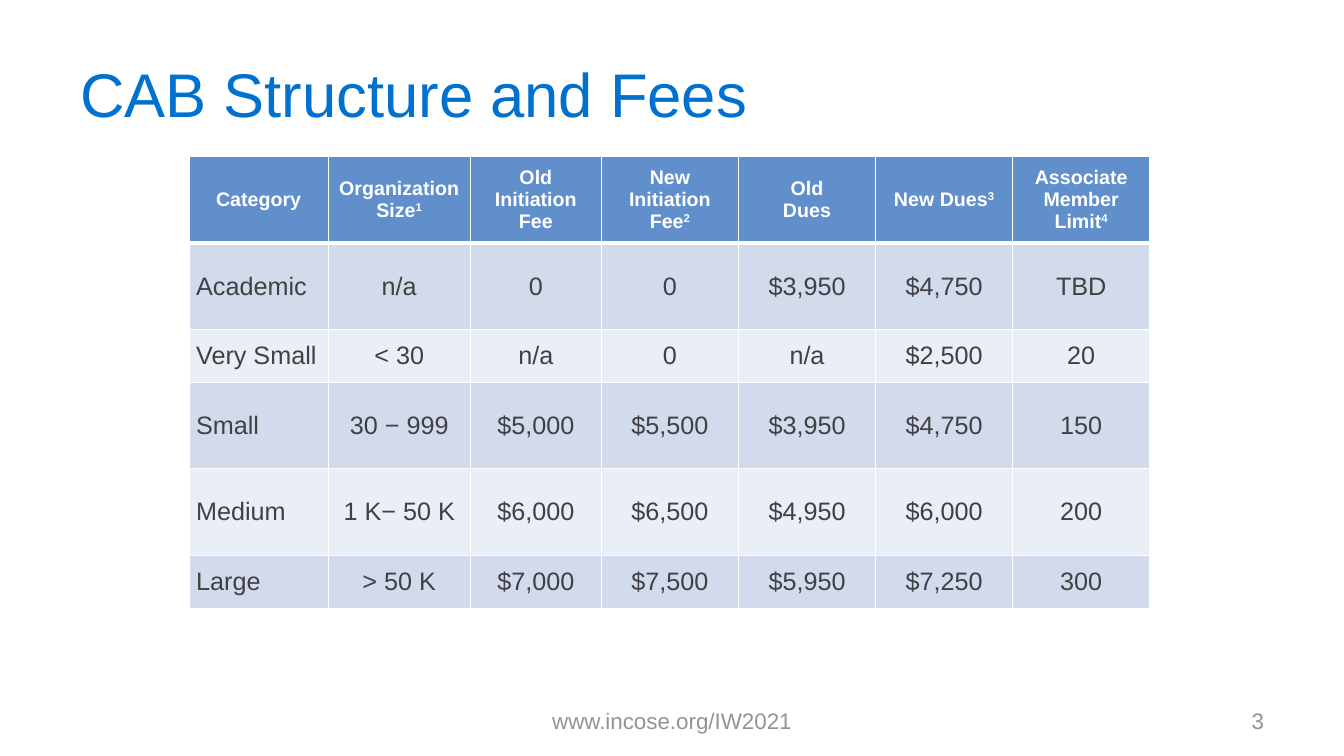
from pptx import Presentation, util as u
from pptx.dml.color import RGBColor
from pptx.enum import text
from pptx.oxml import parse_xml
from pptx.oxml.ns import nsdecls

PX = 9080  # EMU in one px
BLUE = RGBColor(0x00, 0x71, 0xCE)
GRAY = RGBColor(0x93, 0x93, 0x93)
INK = RGBColor(0x41, 0x40, 0x42)
WHITE = RGBColor(0xFF, 0xFF, 0xFF)
HEAD = RGBColor(0x61, 0x8F, 0xCB)
BANDS = RGBColor(0xD2, 0xDB, 0xEC), RGBColor(0xEA, 0xEE, 0xF6)
LEFT, MID, RIGHT = text.PP_ALIGN.LEFT, text.PP_ALIGN.CENTER, text.PP_ALIGN.RIGHT

COLS = [139, 142, 131, 137, 137, 137, 137]
ROWS = [87, 86, 53, 86, 87, 53]
FEES = [
    ["Category", "Organization\nSize^1", "Old\nInitiation Fee", "New\nInitiation Fee^2",
     "Old\nDues", "New Dues^3", "Associate Member\nLimit^4"],
    ["Academic", "n/a", "0", "0", "$3,950", "$4,750", "TBD"],
    ["Very Small", "< 30", "n/a", "0", "n/a", "$2,500", "20"],
    ["Small", "30 − 999", "$5,000", "$5,500", "$3,950", "$4,750", "150"],
    ["Medium", "1 K− 50 K", "$6,000", "$6,500", "$4,950", "$6,000", "200"],
    ["Large", "> 50 K", "$7,000", "$7,500", "$5,950", "$7,250", "300"],
]


class Deck:
    font = "Arial"

    def __init__(self, wide, high):
        self.prs = Presentation()
        self.prs.slide_width, self.prs.slide_height = wide * PX, high * PX
        self.slide = self.prs.slides.add_slide(self.prs.slide_layouts[6])

    def fill(self, frame, words, size, color, align, bold=False):
        """Set the text of a frame; a mark after ^ becomes a superscript."""
        frame.text = words.replace("^", "")
        for para, line in zip(frame.paragraphs, words.split("\n")):
            para.alignment = align
            base, _, mark = line.partition("^")
            para.runs[0].text = base
            if mark:
                note = para.add_run()
                note.text = mark
                note.font._element.set("baseline", "30000")
            for run in para.runs:
                run.font.name, run.font.size = self.font, u.Pt(size)
                run.font.bold, run.font.color.rgb = bold, color

    def label(self, box, words, size, color, align):
        frame = self.slide.shapes.add_textbox(*(n * PX for n in box)).text_frame
        frame.word_wrap = True
        frame.vertical_anchor = text.MSO_ANCHOR.MIDDLE
        frame.margin_left = frame.margin_right = 13 * PX
        frame.margin_top = frame.margin_bottom = 7 * PX
        self.fill(frame, words, size, color, align)

    def edge(self, cell, side, width):
        cell._tc.get_or_add_tcPr().append(parse_xml(
            f'<a:ln{side} {nsdecls("a")} w="{u.Pt(width)}"><a:solidFill>'
            f'<a:srgbClr val="{WHITE}"/></a:solidFill></a:ln{side}>'))

    def cell(self, cell, words, row, col):
        top = row == 0
        cell.vertical_anchor = text.MSO_ANCHOR.MIDDLE
        cell.margin_left = cell.margin_right = 7 * PX
        cell.margin_top = cell.margin_bottom = 4 * PX
        for side in "LRTB":
            thick = (row, side) in ((0, "B"), (1, "T"))
            self.edge(cell, side, 3 if thick else 1)
        cell.fill.solid()
        cell.fill.fore_color.rgb = HEAD if top else BANDS[(row - 1) % 2]
        self.fill(cell.text_frame, words, 14 if top else 18, WHITE if top else INK,
                  MID if top or col else LEFT, top)

    def table(self, left, top, cols, rows, data):
        grid = self.slide.shapes.add_table(
            len(rows), len(cols), left * PX, top * PX, sum(cols) * PX, sum(rows) * PX).table
        for col, wide in zip(grid.columns, cols):
            col.width = wide * PX
        for row, high in zip(grid.rows, rows):
            row.height = high * PX
        for r, line in enumerate(data):
            for c, words in enumerate(line):
                self.cell(grid.cell(r, c), words, r, c)


def main():
    deck = Deck(1343, 755)
    deck.label((67, 30, 1209, 126), "CAB Structure and Fees", 44, BLUE, LEFT)
    deck.label((459, 700, 425, 40), "www.incose.org/IW2021", 16, GRAY, MID)
    deck.label((963, 700, 313, 40), "3", 16, GRAY, RIGHT)
    deck.table(189, 156, COLS, ROWS, FEES)
    deck.prs.save("out.pptx")


if __name__ == "__main__":
    main()
